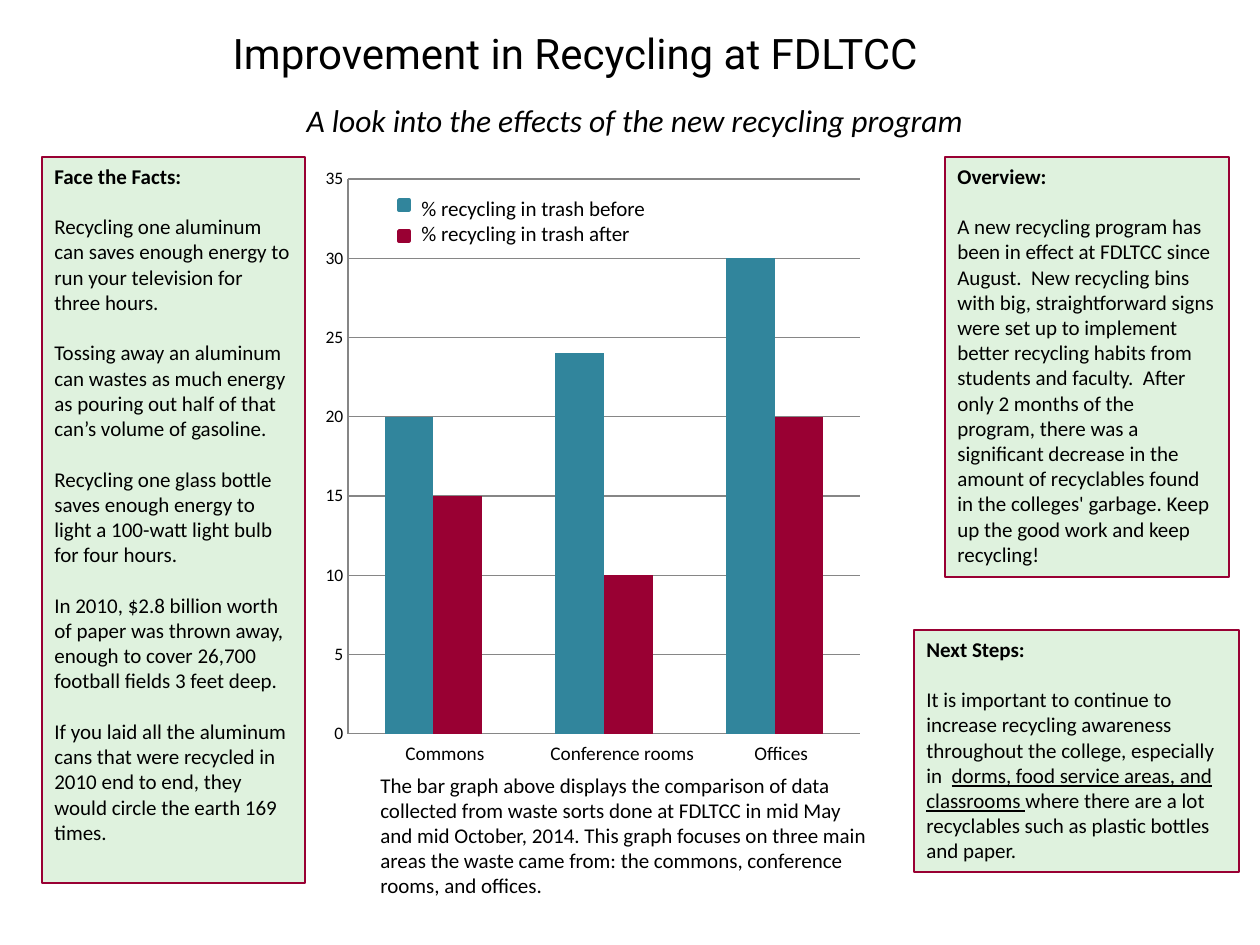
from lxml import etree
from pptx import Presentation
from pptx.chart.data import CategoryChartData
from pptx.dml.color import RGBColor
from pptx.enum.chart import XL_CHART_TYPE, XL_TICK_MARK
from pptx.enum.shapes import MSO_SHAPE
from pptx.enum.text import MSO_ANCHOR, MSO_AUTO_SIZE, PP_ALIGN
from pptx.oxml import parse_xml
from pptx.oxml.ns import nsdecls, qn
from pptx.util import Emu, Pt

BLACK = RGBColor(0x00, 0x00, 0x00)
GRAY = RGBColor(0x86, 0x86, 0x86)
GREEN = RGBColor(0xDF, 0xF2, 0xDE)
TEAL = RGBColor(0x31, 0x85, 0x9C)
MAROON = RGBColor(0x99, 0x00, 0x33)
BODY_FONT = "Calibri"
TITLE_FONT = "Roboto"
PX_PER_INCH = 126


def px(length):
    return Emu(round(length * 914400 / PX_PER_INCH))


class Poster:
    """Holds the text style and the slide being filled."""

    def __init__(self, slide, font=BODY_FONT, size=12, gap=14.5):
        self.slide = slide
        self.font = font
        self.size = size
        self.gap = gap

    def style(self, paragraph, size=None, font=None, bold=False, italic=False):
        paragraph.alignment = PP_ALIGN.LEFT
        paragraph.font.name = font or self.font
        paragraph.font.size = Pt(size or self.size)
        paragraph.font.bold = bold
        paragraph.font.italic = italic
        paragraph.font.color.rgb = BLACK

    def frame(self, shape):
        frame = shape.text_frame
        frame.word_wrap = True
        frame.auto_size = MSO_AUTO_SIZE.NONE
        frame.vertical_anchor = MSO_ANCHOR.TOP
        return frame

    def heading(self, placeholder, box, text, **style):
        placeholder.left, placeholder.top, placeholder.width, placeholder.height = map(px, box)
        frame = self.frame(placeholder)
        frame.text = text
        frame.paragraphs[0].space_before = Pt(0)
        self.style(frame.paragraphs[0], **style)

    def text(self, box, lines, size=None):
        frame = self.frame(self.slide.shapes.add_textbox(*map(px, box)))
        frame.text = "\n".join(lines)
        for paragraph in frame.paragraphs:
            self.style(paragraph, size)
        return frame

    def tabbed_labels(self, box, labels, tabs, size):
        """One line of labels, each after the first at its own tab stop."""
        paragraph = self.text(box, ["\t".join(labels)], size).paragraphs[0]
        properties = paragraph._p.get_or_add_pPr()
        tab_list = etree.Element(qn("a:tabLst"))
        for tab in tabs:
            etree.SubElement(tab_list, qn("a:tab"), pos=str(px(tab)), algn="l")
        properties.find(qn("a:defRPr")).addprevious(tab_list)

    def rectangle(self, box, fill, line, line_width):
        shape = self.slide.shapes.add_shape(MSO_SHAPE.RECTANGLE, *map(px, box))
        shape.shadow.inherit = False
        shape.fill.solid()
        shape.fill.fore_color.rgb = fill
        shape.line.color.rgb = line
        shape.line.width = Pt(line_width)
        return shape

    def panel(self, box, title, paragraphs):
        """Framed box; each paragraph is a list of (text, underlined) runs."""
        frame = self.frame(self.rectangle(box, GREEN, MAROON, 1.5))
        frame.text = title
        self.style(frame.paragraphs[0], bold=True)
        for runs in paragraphs:
            paragraph = frame.add_paragraph()
            paragraph.space_before = Pt(self.gap)
            self.style(paragraph)
            for text, underlined in runs:
                run = paragraph.add_run()
                run.text = text
                if underlined:
                    run.font.underline = True

    def column_chart(self, box, plot, categories, series):
        """Clustered columns; box and plot are left, top, width, height."""
        data = CategoryChartData()
        data.categories = categories
        for name, values, _ in series:
            data.add_series(name, values)
        chart = self.slide.shapes.add_chart(
            XL_CHART_TYPE.COLUMN_CLUSTERED, *map(px, box), data).chart
        chart.has_legend = False
        chart.has_title = False
        chart.font.name = self.font
        chart.font.size = Pt(10)
        chart.font.color.rgb = BLACK
        columns = chart.plots[0]
        columns.gap_width = 150
        columns.overlap = 0
        columns.vary_by_categories = False
        for column, (_, _, color) in zip(columns.series, series):
            column.format.fill.solid()
            column.format.fill.fore_color.rgb = color
        chart.category_axis.visible = False
        axis = chart.value_axis
        axis.minimum_scale, axis.maximum_scale, axis.major_unit = 0, 35, 5
        axis.major_tick_mark = XL_TICK_MARK.NONE
        axis.format.line.color.rgb = GRAY
        axis.major_gridlines.format.line.color.rgb = GRAY
        left, top, width, height = box
        shares = {"x": (plot[0] - left) / width, "y": (plot[1] - top) / height,
                  "w": plot[2] / width, "h": plot[3] / height}
        layout = parse_xml(
            f'<c:layout {nsdecls("c")}><c:manualLayout><c:layoutTarget val="inner"/>'
            '<c:xMode val="edge"/><c:yMode val="edge"/>'
            + "".join(f'<c:{key} val="{share:.4f}"/>' for key, share in shares.items())
            + "</c:manualLayout></c:layout>")
        plot_area = chart._chartSpace.chart.plotArea
        for automatic in plot_area.findall(qn("c:layout")):
            plot_area.remove(automatic)
        plot_area.insert(0, layout)


FACTS = [
    "Recycling one aluminum can saves enough energy to run your television for three hours.",
    "Tossing away an aluminum can wastes as much energy as pouring out half of that "
    "can’s volume of gasoline.",
    "Recycling one glass bottle saves enough energy to light a 100-watt light bulb for four hours.",
    "In 2010, $2.8 billion worth of paper was thrown away, enough to cover 26,700 "
    "football fields 3 feet deep.",
    "If you laid all the aluminum cans that were recycled in 2010 end to end, they would "
    "circle the earth 169 times.",
]
OVERVIEW = (
    "A new recycling program has been in effect at FDLTCC since August.  New recycling bins "
    "with big, straightforward signs were set up to implement better recycling habits from "
    "students and faculty.  After only 2 months of the program, there was a significant "
    "decrease in the amount of recyclables found in the colleges' garbage. Keep up the good "
    "work and keep recycling!")
NEXT_STEPS = [
    ("It is important to continue to increase recycling awareness throughout the college, "
     "especially in  ", False),
    ("dorms, food service areas, and classrooms ", True),
    ("where there are a lot recyclables such as plastic bottles and paper.", False),
]
CAPTION = (
    "The bar graph above displays the comparison of data collected from waste sorts done at "
    "FDLTCC in mid May and mid October, 2014. This graph focuses on three main areas the waste "
    "came from: the commons, conference rooms, and offices.")
AREAS = ["Commons", "Conference rooms", "Offices"]
SERIES = [
    ("% recycling in trash before", (20, 24, 30), TEAL),
    ("% recycling in trash after", (15, 10, 20), MAROON),
]


def main():
    deck = Presentation()
    deck.slide_width, deck.slide_height = px(1260), px(945)
    slide = deck.slides.add_slide(deck.slide_layouts[0])
    poster = Poster(slide)
    title, subtitle = slide.placeholders

    poster.heading(title, (220, 21, 882, 63), "Improvement in Recycling at FDLTCC",
                   size=24, font=TITLE_FONT)
    poster.heading(subtitle, (294, 95, 693, 50),
                   "A look into the effects of the new recycling program", size=18, italic=True)

    poster.panel((42, 157, 263, 726), "Face the Facts:", [[(fact, False)] for fact in FACTS])
    poster.panel((945, 157, 284, 420), "Overview:", [[(OVERVIEW, False)]])
    poster.panel((914, 630, 325, 242), "Next Steps:", [NEXT_STEPS])

    poster.column_chart((315, 157, 557, 599), (348, 179, 512, 555), AREAS, SERIES)
    poster.tabbed_labels((393, 735, 479, 37), AREAS, (145, 349), size=11)
    poster.text((368, 766, 514, 140), [CAPTION])

    poster.text((409, 189, 284, 63), [name for name, _, _ in SERIES])
    for row, (_, _, color) in enumerate(SERIES):
        poster.rectangle((399, 200 + 31 * row, 10, 10), color, color, 2)

    deck.save("out.pptx")


if __name__ == "__main__":
    main()
